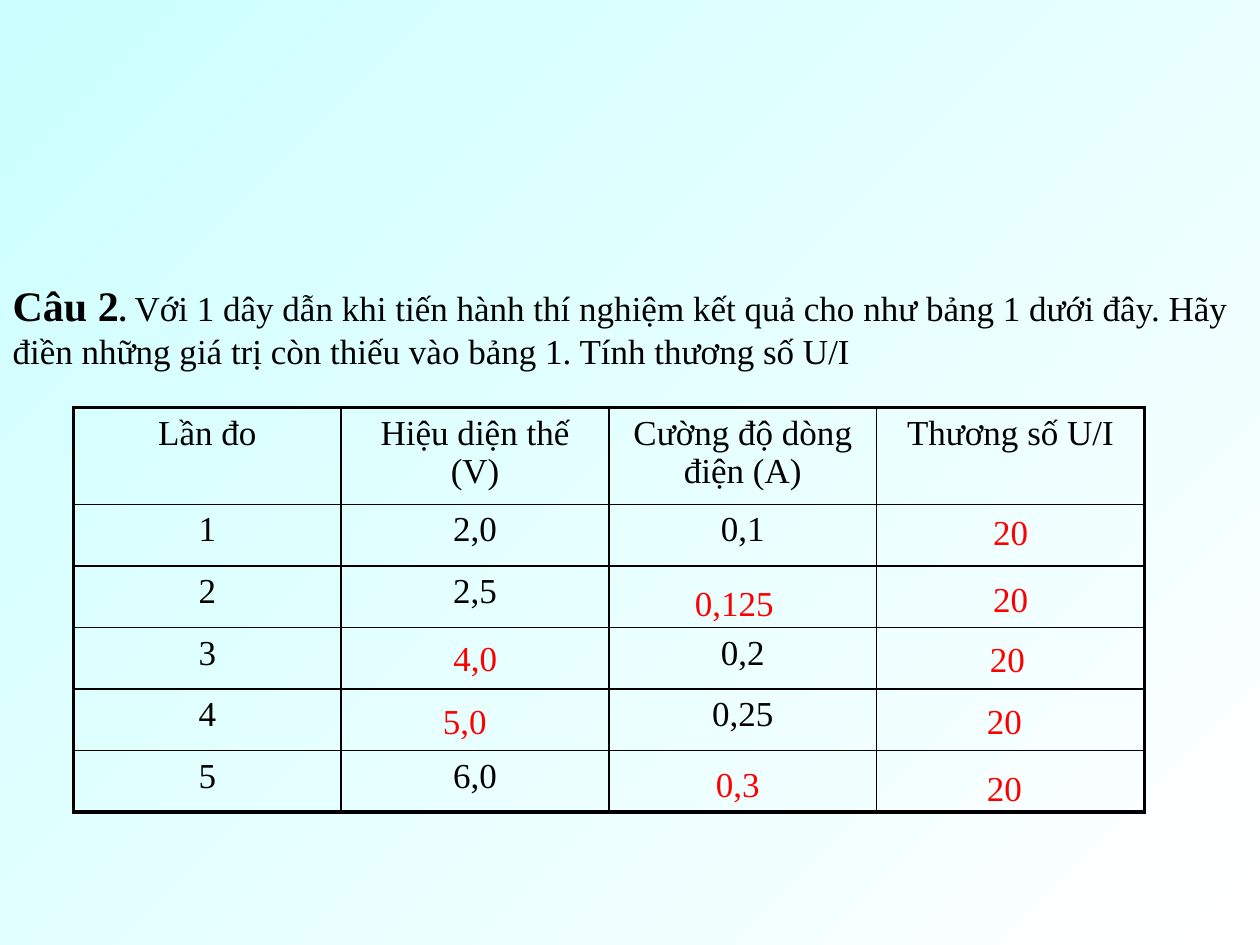
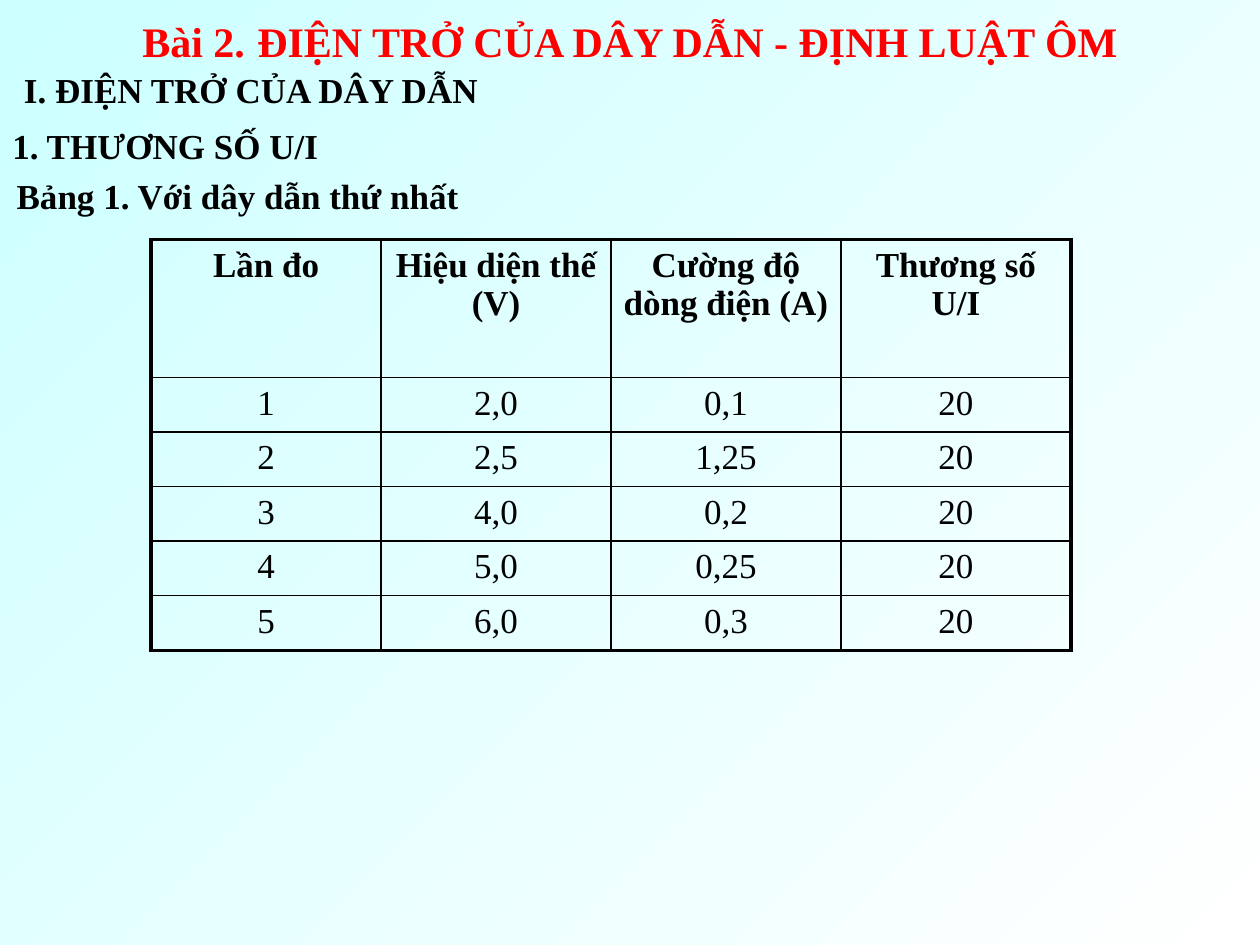
"""Build two physics slides on the resistance of a wire and the ratio U/I."""
from dataclasses import dataclass

from lxml import etree
from pptx import Presentation
from pptx.dml.color import RGBColor
from pptx.enum.text import MSO_ANCHOR, MSO_AUTO_SIZE, PP_ALIGN
from pptx.oxml.ns import qn
from pptx.util import Inches, Pt

LEFT, CENTER = PP_ALIGN.LEFT, PP_ALIGN.CENTER
TOP = MSO_ANCHOR.TOP
NO_FIT = MSO_AUTO_SIZE.NONE


@dataclass(frozen=True)
class Theme:
    font: str = "Times New Roman"
    ink: str = "000000"
    accent: str = "FF0000"
    sky: str = "CCFFFF"
    white: str = "FFFFFF"
    lead: float = 24
    gap: float = 28
    point: float = 18
    body: float = 20
    before: float = 2
    frame_line: float = 2.25
    grid_line: float = 1


THEME = Theme()


def write(frame, text, size=THEME.body, color=THEME.ink, bold=False,
          align=LEFT, before=THEME.before):
    """Add one formatted run to the first paragraph of a text frame."""
    frame.word_wrap = True
    frame.auto_size = NO_FIT
    frame.vertical_anchor = TOP
    para = frame.paragraphs[0]
    para.alignment = align
    para.space_before = Pt(before)
    span = para.add_run()
    span.text = text
    span.font.name = THEME.font
    span.font.size = Pt(size)
    span.font.bold = bold
    span.font.color.rgb = RGBColor.from_string(color)


def add_results(page, rows, left, top, width, head_height, row_height, bold_head):
    """Draw a table of measurements with a heavy frame and thin inner lines."""
    row_count, column_count = len(rows), len(rows[0])
    height = head_height + row_height * (row_count - 1)
    table = page.shapes.add_table(
        row_count, column_count, int(left * UNIT), int(top * UNIT),
        int(width * UNIT), int(height * UNIT)).table
    table.first_row = table.horz_banding = False
    for row_index, row in enumerate(rows):
        is_head = row_index == 0
        table.rows[row_index].height = int((head_height if is_head else row_height) * UNIT)
        for column_index, value in enumerate(row):
            cell = table.cell(row_index, column_index)
            if value:
                write(cell.text_frame, value, bold=is_head and bold_head,
                      align=CENTER, before=0)
            cell.fill.background()
            outer_edges = {
                "L": column_index == 0,
                "R": column_index == column_count - 1,
                "T": is_head,
                "B": row_index == row_count - 1,
            }
            properties = cell._tc.get_or_add_tcPr()
            for position, (side, is_outer) in enumerate(outer_edges.items()):
                weight = THEME.frame_line if is_outer else THEME.grid_line
                line = etree.Element(qn(f"a:ln{side}"), w=str(Pt(weight)))
                fill = etree.SubElement(line, qn("a:solidFill"))
                etree.SubElement(fill, qn("a:srgbClr"), val=THEME.ink)
                properties.insert(position, line)


deck = Presentation()
deck.slide_width, deck.slide_height = Inches(10), Inches(7.5)
UNIT = deck.slide_width / 120

backdrop = deck.slide_master.background.fill
backdrop.gradient()
backdrop.gradient_angle = 315
for stop, color in zip(backdrop.gradient_stops, (THEME.sky, THEME.white)):
    stop.color.rgb = RGBColor.from_string(color)

title_only = deck.slide_layouts[5]
question_page = deck.slides.add_slide(title_only)
lesson_page = deck.slides.add_slide(title_only)

titles = [
    (question_page, 26, 12, LEFT, [
        ("Câu 2", THEME.lead, THEME.ink, True),
        (". ", THEME.point, THEME.ink, True),
        ("Với 1 dây dẫn khi tiến hành thí nghiệm kết quả cho như bảng 1 dưới đây. "
         "Hãy điền những giá trị còn thiếu vào bảng 1. Tính thương số U/I",
         THEME.body, THEME.ink, False),
    ]),
    (lesson_page, 0.2, 6.8, CENTER, [
        ("Bài 2.", THEME.lead, THEME.accent, True),
        (" ", THEME.gap, THEME.accent, True),
        ("ĐIỆN TRỞ CỦA DÂY DẪN - ĐỊNH LUẬT ÔM", THEME.lead, THEME.accent, True),
    ]),
]
for page, top, height, align, spans in titles:
    title = page.shapes.title
    title.left, title.top = 0, int(top * UNIT)
    title.width, title.height = deck.slide_width, int(height * UNIT)
    for text, size, color, bold in spans:
        write(title.text_frame, text, size=size, color=color, bold=bold, align=align)

header = ["Lần đo", "Hiệu diện thế (V)", "Cường độ dòng điện (A)", "Thương số U/I"]
given_rows = [
    header,
    ["1", "2,0", "0,1", ""],
    ["2", "2,5", "", ""],
    ["3", "", "0,2", ""],
    ["4", "", "0,25", ""],
    ["5", "6,0", "", ""],
]
solved_rows = [
    header,
    ["1", "2,0", "0,1", "20"],
    ["2", "2,5", "1,25", "20"],
    ["3", "4,0", "0,2", "20"],
    ["4", "5,0", "0,25", "20"],
    ["5", "6,0", "0,3", "20"],
]
add_results(question_page, given_rows, left=7, top=38.8, width=102,
            head_height=9.24, row_height=5.86, bold_head=False)
add_results(lesson_page, solved_rows, left=14.4, top=22.8, width=87.6,
            head_height=13.15, row_height=5.2, bold_head=True)

answers = [
    ("4,0", 42, 60, 11),
    ("5,0", 41, 66, 11),
    ("0,125", 65, 54.8, 14),
    ("0,3", 67, 72, 9),
    ("20", 93.4, 48, 8),
    ("20", 93.4, 54.4, 8),
    ("20", 93.1, 60.1, 8),
    ("20", 92.8, 66, 8),
    ("20", 92.8, 72.4, 8),
]
headings = [
    ("I. ĐIỆN TRỞ CỦA DÂY DẪN", 1.1, 5.9, 62),
    ("1. THƯƠNG SỐ U/I", 0, 11.3, 42),
    ("Bảng 1. Với dây dẫn thứ nhất", 0.4, 16, 119.6),
]
for page, labels, color, bold in [
    (question_page, answers, THEME.accent, False),
    (lesson_page, headings, THEME.ink, True),
]:
    for text, left, top, width in labels:
        box = page.shapes.add_textbox(
            int(left * UNIT), int(top * UNIT), int(width * UNIT), int(5.2 * UNIT))
        write(box.text_frame, text, color=color, bold=bold)

deck.save("out.pptx")
